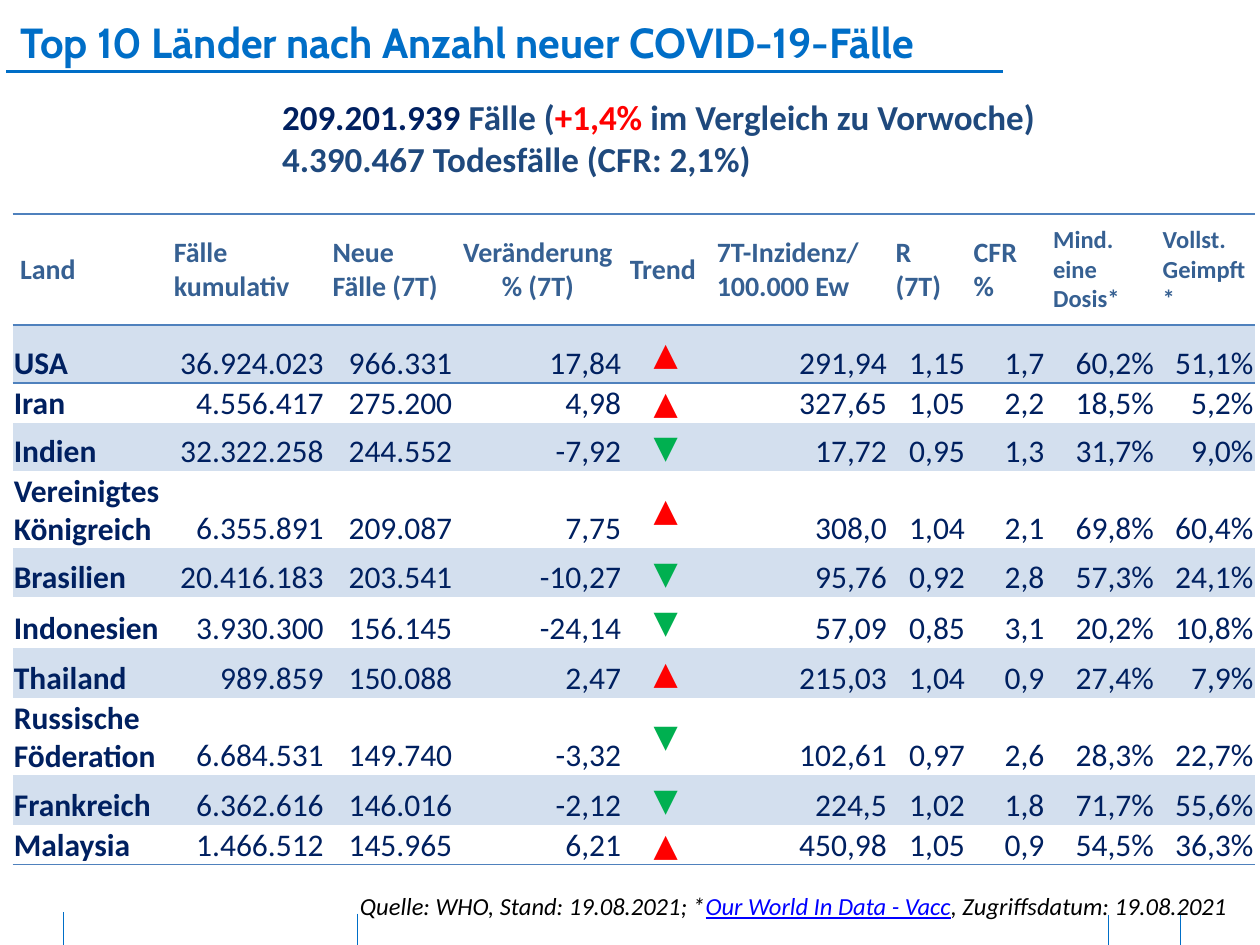
from dataclasses import dataclass
from typing import NamedTuple

from lxml import etree
from pptx import Presentation
from pptx.dml.color import RGBColor
from pptx.enum import shapes, text
from pptx.oxml import ns
from pptx.util import Inches, Pt


@dataclass(frozen=True)
class Theme:
    heading_font: str = "Cabin"
    body_font: str = "Calibri"
    accent: str = "006EC7"
    navy: str = "002060"
    blue: str = "1F497D"
    header: str = "366092"
    border: str = "4F81BD"
    band: str = "D3DFEE"
    rising: str = "FF0000"
    falling: str = "00B050"
    link: str = "0000FF"
    black: str = "000000"
    title_size: int = 24
    summary_size: int = 20
    body_size: int = 18
    header_size: int = 16
    small_size: int = 14


THEME = Theme()
LEFT, CENTER, RIGHT = text.PP_ALIGN.LEFT, text.PP_ALIGN.CENTER, text.PP_ALIGN.RIGHT
MIDDLE, BOTTOM = text.MSO_ANCHOR.MIDDLE, text.MSO_ANCHOR.BOTTOM
NO_STYLE_NO_GRID = "{2D5ABB26-0587-4C30-8999-92F81FD0307C}"


class Span(NamedTuple):
    words: str
    size: int
    color: str
    bold: bool = False
    italic: bool = False
    underline: bool = False
    font: str = THEME.body_font


class Column(NamedTuple):
    heading: str
    width: float
    align: text.PP_ALIGN = LEFT
    size: int = THEME.header_size


class Line(NamedTuple):
    x1: float
    y1: float
    x2: float
    y2: float
    width: float


class Country(NamedTuple):
    height: float
    name: str
    figures: str  # the eight numeric columns, without the trend

    def values(self) -> list[str]:
        """All cell texts, with the trend arrow derived from the weekly change."""
        figures = self.figures.split()
        arrow = "▼" if figures[2].startswith("-") else "▲"
        return [self.name, *figures[:3], arrow, *figures[3:]]


TREND = 4
HEADER_HEIGHT = 0.88
COLUMNS = [
    Column("Land", 1.22),
    Column("Fälle kumulativ", 1.26),
    Column("Neue Fälle (7T)", 1.02),
    Column("Veränderung % (7T)", 1.34, CENTER),
    Column("Trend", 0.69),
    Column("7T-Inzidenz/ 100.000 Ew", 1.42),
    Column("R (7T)", 0.62),
    Column("CFR %", 0.63),
    Column("Mind. eine Dosis*", 0.87, size=THEME.small_size),
    Column("Vollst. Geimpft*", 0.79, size=THEME.small_size),
]
COUNTRIES = [
    Country(0.46, "USA", "36.924.023 966.331 17,84 291,94 1,15 1,7 60,2% 51,1%"),
    Country(0.32, "Iran", "4.556.417 275.200 4,98 327,65 1,05 2,2 18,5% 5,2%"),
    Country(0.38, "Indien", "32.322.258 244.552 -7,92 17,72 0,95 1,3 31,7% 9,0%"),
    Country(0.61, "Vereinigtes Königreich", "6.355.891 209.087 7,75 308,0 1,04 2,1 69,8% 60,4%"),
    Country(0.39, "Brasilien", "20.416.183 203.541 -10,27 95,76 0,92 2,8 57,3% 24,1%"),
    Country(0.4, "Indonesien", "3.930.300 156.145 -24,14 57,09 0,85 3,1 20,2% 10,8%"),
    Country(0.4, "Thailand", "989.859 150.088 2,47 215,03 1,04 0,9 27,4% 7,9%"),
    Country(0.6, "Russische Föderation", "6.684.531 149.740 -3,32 102,61 0,97 2,6 28,3% 22,7%"),
    Country(0.4, "Frankreich", "6.362.616 146.016 -2,12 224,5 1,02 1,8 71,7% 55,6%"),
    Country(0.31, "Malaysia", "1.466.512 145.965 6,21 450,98 1,05 0,9 54,5% 36,3%"),
]
FOOTER_TICKS = [
    Line(x, top, x, 7.5, 0.5) for x, top in [(2.84, 7.25), (0.5, 7.24), (9.37, 7.26), (8.8, 7.26)]
]
TITLE_RULE = Line(0.05, 0.57, 7.96, 0.57, 1.5)


def add_span(para, span: Span) -> None:
    run = para.add_run()
    run.text = span.words
    font = run.font
    font.name, font.size = span.font, Pt(span.size)
    font.bold, font.italic, font.underline = span.bold, span.italic, span.underline
    font.color.rgb = RGBColor.from_string(span.color)


def add_line(page, line: Line) -> None:
    ends = [Inches(value) for value in line[:4]]
    connector = page.shapes.add_connector(shapes.MSO_CONNECTOR.STRAIGHT, *ends)
    connector.line.color.rgb = RGBColor.from_string(THEME.accent)
    connector.line.width = Pt(line.width)
    etree.SubElement(connector.element.spPr, ns.qn("a:effectLst"))


def add_text(page, place: tuple[float, ...], paragraphs: list[list[Span]],
             align: text.PP_ALIGN = LEFT, padded: bool = True) -> None:
    frame = page.shapes.add_textbox(*(Inches(value) for value in place)).text_frame
    frame.word_wrap = True
    if not padded:
        frame.margin_left = frame.margin_top = frame.margin_right = frame.margin_bottom = 0
    for index, spans in enumerate(paragraphs):
        para = frame.add_paragraph() if index else frame.paragraphs[0]
        para.alignment = align
        for span in spans:
            add_span(para, span)


def add_border(cell, side: str) -> None:
    """Draw one side of a cell: lnT or lnB."""
    border = etree.SubElement(cell._tc.get_or_add_tcPr(), ns.qn(f"a:{side}"), w=str(Pt(1)))
    fill = etree.SubElement(border, ns.qn("a:solidFill"))
    etree.SubElement(fill, ns.qn("a:srgbClr"), val=THEME.border)


def fill_cell(cell, span: Span, align: text.PP_ALIGN, anchor: text.MSO_ANCHOR,
              margins: tuple[float, float], borders: list[str], banded: bool) -> None:
    side, top = margins
    cell.margin_left = cell.margin_right = Inches(side)
    cell.margin_top, cell.margin_bottom = Inches(top), 0
    cell.vertical_anchor = anchor
    for border in borders:
        add_border(cell, border)
    if banded:
        cell.fill.solid()
        cell.fill.fore_color.rgb = RGBColor.from_string(THEME.band)
    else:
        cell.fill.background()
    para = cell.text_frame.paragraphs[0]
    para.alignment = align
    add_span(para, span)


def add_country_table(page) -> None:
    heights = [HEADER_HEIGHT, *(country.height for country in COUNTRIES)]
    widths = [column.width for column in COLUMNS]
    frame = page.shapes.add_table(len(heights), len(widths), Inches(0.1), Inches(1.7),
                                  Inches(sum(widths)), Inches(sum(heights)))
    table = frame.table
    table.first_row = table.horz_banding = False
    table._tbl.tblPr.find(ns.qn("a:tableStyleId")).text = NO_STYLE_NO_GRID
    for row, height in zip(table.rows, heights):
        row.height = Inches(height)
    for index, column in enumerate(COLUMNS):
        table.columns[index].width = Inches(column.width)
        heading = Span(column.heading, column.size, THEME.header, bold=True)
        fill_cell(table.cell(0, index), heading, column.align, MIDDLE, (0.06, 0), ["lnT", "lnB"], False)
    for row, country in enumerate(COUNTRIES, start=1):
        borders = ["lnT"] if row == 1 else ["lnB"] if row == len(COUNTRIES) else []
        for index, value in enumerate(country.values()):
            color, align, anchor = THEME.navy, RIGHT if index else LEFT, BOTTOM
            if index == TREND:
                color = THEME.rising if value == "▲" else THEME.falling
                align, anchor = CENTER, MIDDLE
            span = Span(value, THEME.body_size, color, bold=index == 0)
            fill_cell(table.cell(row, index), span, align, anchor, (0.01, 0.01), borders, row % 2 == 1)


def main() -> None:
    deck = Presentation()
    deck.slide_width, deck.slide_height = Inches(10), Inches(7.5)
    page = deck.slides.add_slide(deck.slide_layouts[6])
    for tick in FOOTER_TICKS:
        add_line(page, tick)
    add_text(page, (0.16, 0.13, 8.85, 0.4), [[
        Span("Top 10 Länder nach Anzahl neuer COVID-19-Fälle", THEME.title_size, THEME.accent,
             bold=True, font=THEME.heading_font)]], padded=False)
    add_line(page, TITLE_RULE)
    size = THEME.summary_size
    add_text(page, (2.14, 0.71, 6.72, 0.77), [
        [Span("209.201.939 ", size, THEME.navy, bold=True),
         Span("Fälle (", size, THEME.blue, bold=True),
         Span("+1,4% ", size, THEME.rising, bold=True),
         Span("im Vergleich zu Vorwoche)", size, THEME.blue, bold=True)],
        [Span("4.390.467 Todesfälle (CFR: 2,1%)", size, THEME.blue, bold=True)]])
    size = THEME.small_size
    add_text(page, (0.78, 7.02, 9.1, 0.34), [[
        Span("Quelle: WHO, Stand: 19.08.2021; *", size, THEME.black, italic=True),
        Span("Our World In Data - Vacc", size, THEME.link, italic=True, underline=True),
        Span(", Zugriffsdatum: 19.08.2021 ", size, THEME.black, italic=True)]], RIGHT)
    add_country_table(page)
    deck.save("out.pptx")


if __name__ == "__main__":
    main()
